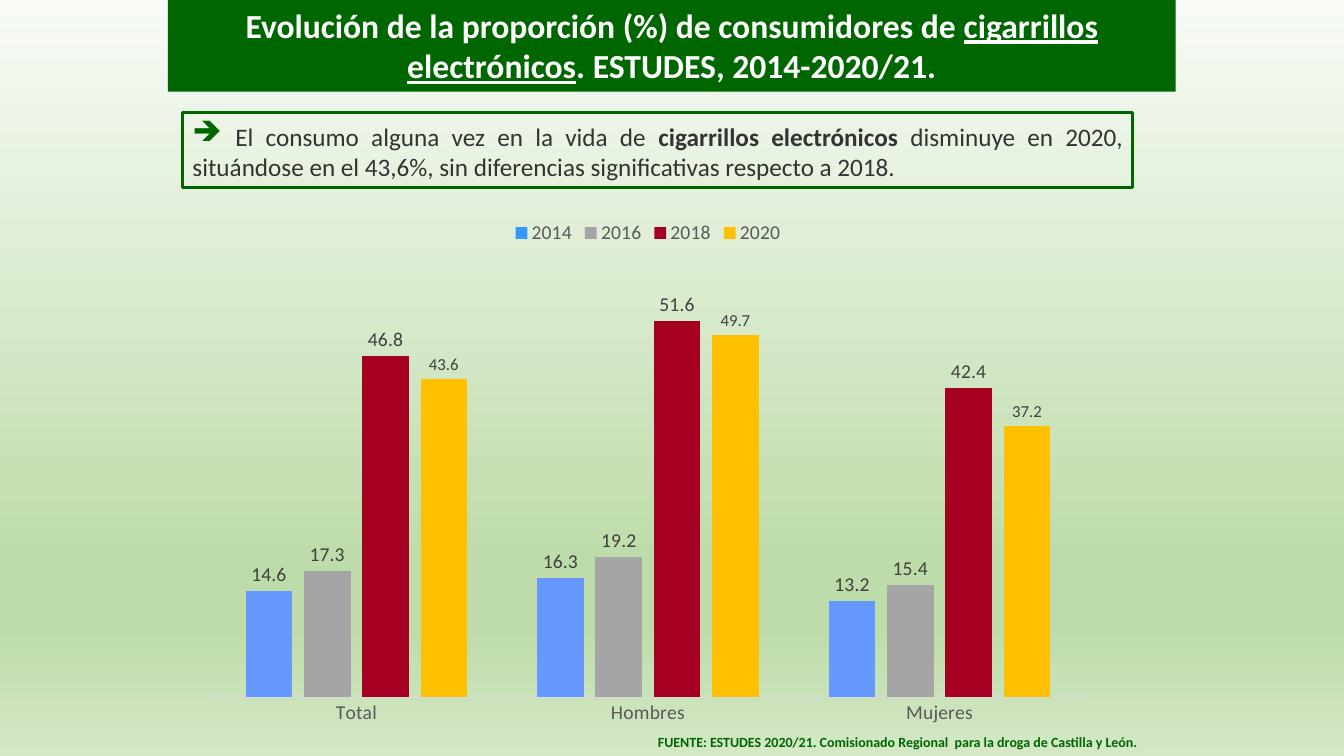
from pptx import Presentation
from pptx.chart.data import CategoryChartData
from pptx.dml.color import RGBColor
from pptx.enum.chart import XL_CHART_TYPE, XL_LABEL_POSITION, XL_LEGEND_POSITION, XL_TICK_MARK
from pptx.enum.shapes import MSO_SHAPE
from pptx.enum.text import MSO_ANCHOR, MSO_AUTO_SIZE, PP_ALIGN
from pptx.oxml import parse_xml
from pptx.oxml.ns import nsdecls, qn
from pptx.util import Cm, Pt

FONT = "Calibri"
GREEN = "006600"
NUMBER_FORMAT = "#,##0.0"
CATEGORIES = ["Total", "Hombres", "Mujeres"]
# Year, percentages, colour, label size
SERIES = [
    ("2014", (14.6, 16.3, 13.2), "3399FF", 14),
    ("2016", (17.3, 19.2, 15.4), "A5A5A5", 14),
    ("2018", (46.8, 51.6, 42.4), "A50021", 14),
    ("2020", (43.6, 49.7, 37.2), "FFC000", 12),
]
FIRST_YEAR_BARS = "6699FF"
BACKGROUND_STOPS = [(0, "F8FBF6"), (74, "BEDCAA"), (83, "BEDCAA"), (100, "D4E8C6")]


def color(hex_string):
    return RGBColor.from_string(hex_string)


def style_font(font, size, hex_string, bold=None):
    font.name = FONT
    font.size = Pt(size)
    font.color.rgb = color(hex_string)
    font.bold = bold


def add_runs(paragraph, texts):
    return [add_run(paragraph, text) for text in texts]


def add_run(paragraph, text):
    run = paragraph.add_run()
    run.text = text
    return run


def add_rectangle(slide, box):
    """Add a plain rectangle and return it with its first paragraph."""
    shape = slide.shapes.add_shape(MSO_SHAPE.RECTANGLE, *map(Cm, box))
    shape.shadow.inherit = False
    shape.text_frame.word_wrap = True
    shape.text_frame.auto_size = MSO_AUTO_SIZE.SHAPE_TO_FIT_TEXT
    return shape, shape.text_frame.paragraphs[0]


def paint_background(slide):
    fill = slide.background.fill
    fill.gradient()
    fill.gradient_angle = 270
    stop_list = slide.element.find(".//" + qn("a:gsLst"))
    for stop in list(stop_list):
        stop_list.remove(stop)
    for position, hex_string in BACKGROUND_STOPS:
        stop_list.append(parse_xml(
            f'<a:gs {nsdecls("a")} pos="{position * 1000}">'
            f'<a:srgbClr val="{hex_string}"/></a:gs>'))


def add_title(slide, box):
    shape, paragraph = add_rectangle(slide, box)
    shape.fill.solid()
    shape.fill.fore_color.rgb = color(GREEN)
    shape.line.fill.background()
    shape.text_frame.vertical_anchor = MSO_ANCHOR.TOP
    paragraph.alignment = PP_ALIGN.CENTER
    style_font(paragraph.font, 24, "FFFFFF", True)
    runs = add_runs(paragraph, [
        "Evolución de la proporción (%) de consumidores de ",
        "cigarrillos electrónicos",
        ". ESTUDES, 2014-2020/21.",
    ])
    runs[1].font.underline = True


def add_message(slide, box):
    shape, paragraph = add_rectangle(slide, box)
    shape.fill.background()
    shape.line.color.rgb = color(GREEN)
    shape.line.width = Pt(2)
    shape.text_frame.vertical_anchor = MSO_ANCHOR.MIDDLE
    paragraph.alignment = PP_ALIGN.JUSTIFY
    properties = paragraph._p.get_or_add_pPr()
    properties.append(parse_xml(
        f'<a:buClr {nsdecls("a")}><a:srgbClr val="{GREEN}"/></a:buClr>'))
    properties.append(parse_xml(f'<a:buChar {nsdecls("a")} char="➔"/>'))
    style_font(paragraph.font, 18, "333333")
    runs = add_runs(paragraph, [
        " ",
        "El consumo alguna vez en la vida de ",
        "cigarrillos electrónicos",
        " disminuye en 2020, situándose en el 43,6%, "
        "sin diferencias significativas respecto a 2018.",
    ])
    runs[0].font.size = Pt(20)
    runs[2].font.bold = True


def add_consumption_chart(slide, box):
    data = CategoryChartData(number_format=NUMBER_FORMAT)
    data.categories = CATEGORIES
    for year, values, _, _ in SERIES:
        data.add_series(year, values)
    chart = slide.shapes.add_chart(
        XL_CHART_TYPE.COLUMN_CLUSTERED, *map(Cm, box), data).chart
    style_font(chart.font, 10, "000000")
    chart.has_title = False
    chart.has_legend = True
    chart.legend.position = XL_LEGEND_POSITION.TOP
    chart.legend.include_in_layout = False
    style_font(chart.legend.font, 14, "595959")

    value_axis = chart.value_axis
    value_axis.visible = False
    value_axis.has_major_gridlines = False
    value_axis.minimum_scale = 0
    value_axis.maximum_scale = 60
    category_axis = chart.category_axis
    category_axis.major_tick_mark = XL_TICK_MARK.NONE
    category_axis.format.line.color.rgb = color("D9D9D9")
    category_axis.format.line.width = Pt(0.75)
    style_font(category_axis.tick_labels.font, 14, "595959")

    plot = chart.plots[0]
    plot.vary_by_categories = False
    plot.gap_width = 150
    plot.overlap = -25
    for series, (_, _, hex_string, label_size) in zip(plot.series, SERIES):
        paint(series, hex_string)
        labels = series.data_labels
        labels.show_value = True
        labels.position = XL_LABEL_POSITION.OUTSIDE_END
        labels.number_format = NUMBER_FORMAT
        labels.number_format_is_linked = False
        style_font(labels.font, label_size, "404040")
    for index in range(len(CATEGORIES)):
        paint(plot.series[0].points[index], FIRST_YEAR_BARS)


def paint(bars, hex_string):
    bars.format.fill.solid()
    bars.format.fill.fore_color.rgb = color(hex_string)


def add_source(slide, box):
    frame = slide.shapes.add_textbox(*map(Cm, box)).text_frame
    frame.word_wrap = True
    frame.auto_size = MSO_AUTO_SIZE.SHAPE_TO_FIT_TEXT
    paragraph = frame.paragraphs[0]
    style_font(paragraph.font, 10, GREEN, True)
    add_run(paragraph, "FUENTE: ESTUDES 2020/21. Comisionado Regional  "
                       "para la droga de Castilla y León.")


def main():
    presentation = Presentation()
    presentation.slide_width = Cm(33.87)
    presentation.slide_height = Cm(19.05)
    slide = presentation.slides.add_slide(presentation.slide_layouts[6])
    paint_background(slide)
    add_title(slide, (4.23, 0, 25.4, 2.31))
    add_source(slide, (16.33, 18.36, 13.31, 0.69))
    add_consumption_chart(slide, (4.85, 5.28, 22.96, 13.26))
    add_message(slide, (4.6, 2.84, 23.95, 1.88))
    presentation.save("out.pptx")


if __name__ == "__main__":
    main()
